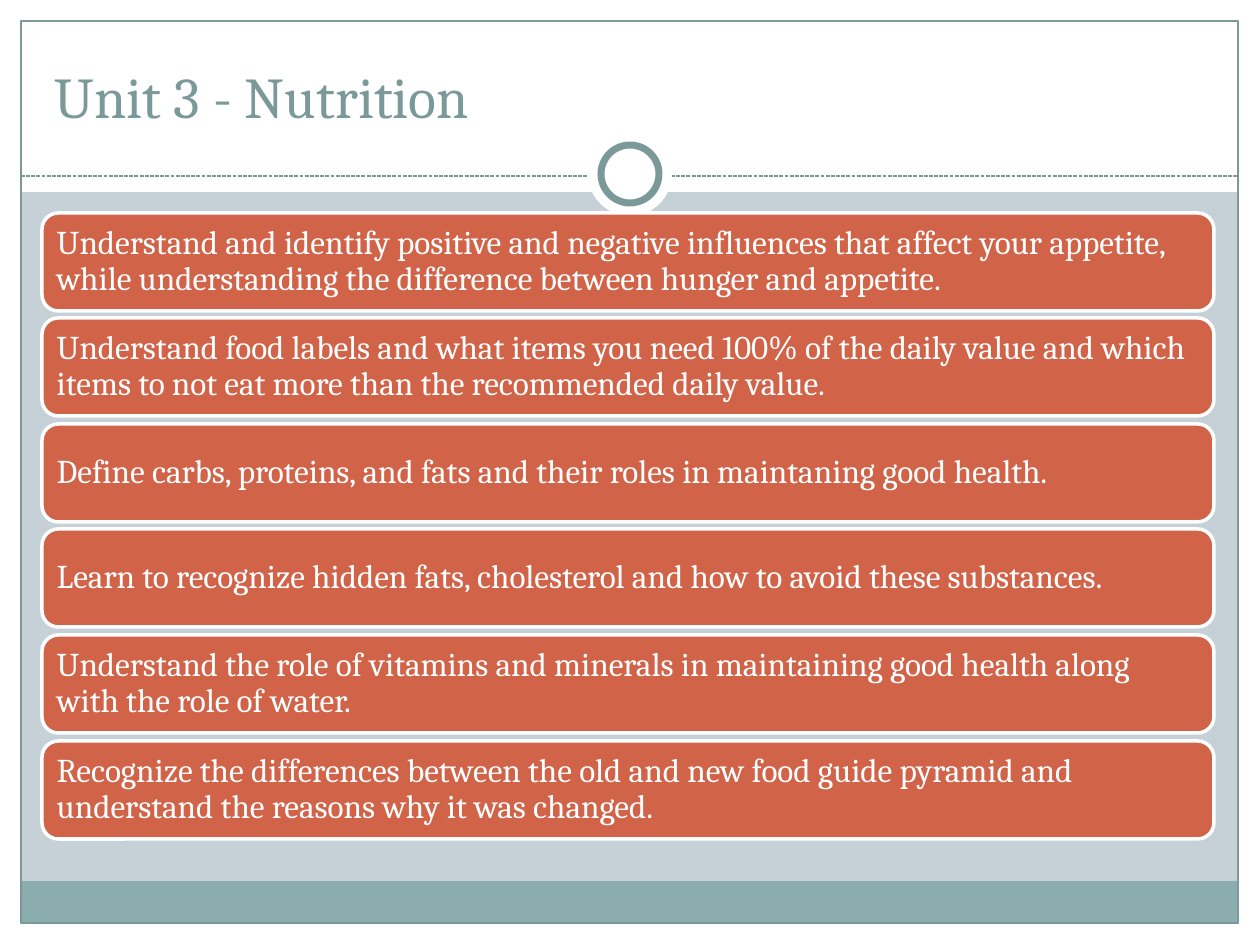
from dataclasses import dataclass
from typing import Optional

import pptx
import pptx.dml.color
import pptx.enum.dml
import pptx.enum.shapes
import pptx.enum.text
import pptx.oxml.ns
import pptx.util
from lxml import etree

SHAPE = pptx.enum.shapes.MSO_SHAPE
ANCHOR = pptx.enum.text.MSO_ANCHOR
LEFT = pptx.enum.text.PP_ALIGN.LEFT
Pt = pptx.util.Pt
PX_PER_INCH = 126
COLORS = {
    "background": "C5D1D7",
    "white": "FFFFFF",
    "footer": "8CADAE",
    "accent": "7C999A",
    "card": "D16349",
}
FONT = "Cambria"
CARD_LEFT, CARD_TOP, CARD_WIDTH, CARD_HEIGHT = 42, 213, 1172, 98
LAST_CARD_TOP = 741
GOALS = [
    "Understand and identify positive and negative influences that affect your appetite, "
    "while understanding the difference between hunger and appetite.",
    "Understand food labels and what items you need 100% of the daily value and which "
    "items to not eat more than the recommended daily value.",
    "Define carbs, proteins, and fats and their roles in maintaning good health.",
    "Learn to recognize hidden fats, cholesterol and how to avoid these substances.",
    "Understand the role of vitamins and minerals in maintaining good health along "
    "with the role of water.",
    "Recognize the differences between the old and new food guide pyramid and "
    "understand the reasons why it was changed.",
]


@dataclass
class Box:
    left: int
    top: int
    width: int
    height: int
    fill: Optional[str] = "white"
    line: Optional[str] = None
    line_pt: float = 0.75
    kind: SHAPE = SHAPE.RECTANGLE


FRAME = [
    Box(0, 924, 1260, 21),
    Box(0, 0, 1260, 192),
    Box(0, 0, 21, 945),
    Box(1239, 0, 21, 945),
    Box(21, 881, 1217, 43, "footer"),
    Box(21, 21, 1217, 902, None, "accent"),
]
RING = [
    Box(588, 132, 84, 84, kind=SHAPE.OVAL),
    Box(601, 145, 58, 58, "white", "accent", 4, SHAPE.OVAL),
]


def px(n: int) -> pptx.util.Emu:
    return pptx.util.Emu(round(n * 914400 / PX_PER_INCH))


def rgb(name: str) -> pptx.dml.color.RGBColor:
    return pptx.dml.color.RGBColor.from_string(COLORS[name])


def apply(target, values: dict) -> None:
    for name, value in values.items():
        setattr(target, name, value)


def draw_box(s, box: Box):
    sp = s.shapes.add_shape(box.kind, *map(px, (box.left, box.top, box.width, box.height)))
    sp.shadow.inherit = False
    if box.fill:
        sp.fill.solid()
        sp.fill.fore_color.rgb = rgb(box.fill)
    else:
        sp.fill.background()
    if box.line:
        sp.line.color.rgb = rgb(box.line)
        sp.line.width = Pt(box.line_pt)
    else:
        sp.line.fill.background()
    return sp


def draw_divider(s, left: int, right: int, y: int) -> None:
    line = s.shapes.add_connector(
        pptx.enum.shapes.MSO_CONNECTOR.STRAIGHT, px(left), px(y), px(right), px(y))
    line.line.color.rgb = rgb("accent")
    line.line.width = Pt(0.75)
    line.line.dash_style = pptx.enum.dml.MSO_LINE.SQUARE_DOT
    etree.SubElement(line.element.spPr, pptx.oxml.ns.qn("a:effectLst"))


def write_text(sp, text: str, size: int, color: str, frame: dict, paragraph: dict) -> None:
    tf = sp.text_frame
    apply(tf, {"word_wrap": True, **frame})
    p = tf.paragraphs[0]
    apply(p, {"alignment": LEFT, **paragraph})
    r = p.add_run()
    r.text = text
    apply(r.font, {"name": FONT, "size": Pt(size)})
    r.font.color.rgb = rgb(color)


def draw_title(s, text: str) -> None:
    title = s.shapes.title
    apply(title, {"left": px(42), "top": px(32), "width": px(1176), "height": px(104)})
    write_text(title, text, 33, "accent", {
        "vertical_anchor": ANCHOR.BOTTOM,
        "auto_size": pptx.enum.text.MSO_AUTO_SIZE.NONE,
    }, {})
    title.element.getparent().append(title.element)


def draw_card(s, top: int, text: str) -> None:
    sp = draw_box(s, Box(CARD_LEFT, top, CARD_WIDTH, CARD_HEIGHT,
                         "card", "white", 2, SHAPE.ROUNDED_RECTANGLE))
    margins = {f"margin_{side}": px(10) for side in ("left", "top", "right", "bottom")}
    write_text(sp, text, 19, "white", {"vertical_anchor": ANCHOR.MIDDLE, **margins},
               {"line_spacing": 0.9, "space_after": Pt(6.65)})


def main() -> None:
    prs = pptx.Presentation()
    apply(prs, {"slide_width": px(1260), "slide_height": px(945)})
    s = prs.slides.add_slide(prs.slide_layouts[5])
    s.background.fill.solid()
    s.background.fill.fore_color.rgb = rgb("background")
    for box in FRAME:
        draw_box(s, box)
    draw_divider(s, 21, 1239, 176)
    for box in RING:
        draw_box(s, box)
    draw_title(s, "Unit 3 - Nutrition")
    for i, goal in enumerate(GOALS):
        top = CARD_TOP + i * (LAST_CARD_TOP - CARD_TOP) // (len(GOALS) - 1)
        draw_card(s, top, goal)
    prs.save("out.pptx")


if __name__ == "__main__":
    main()
